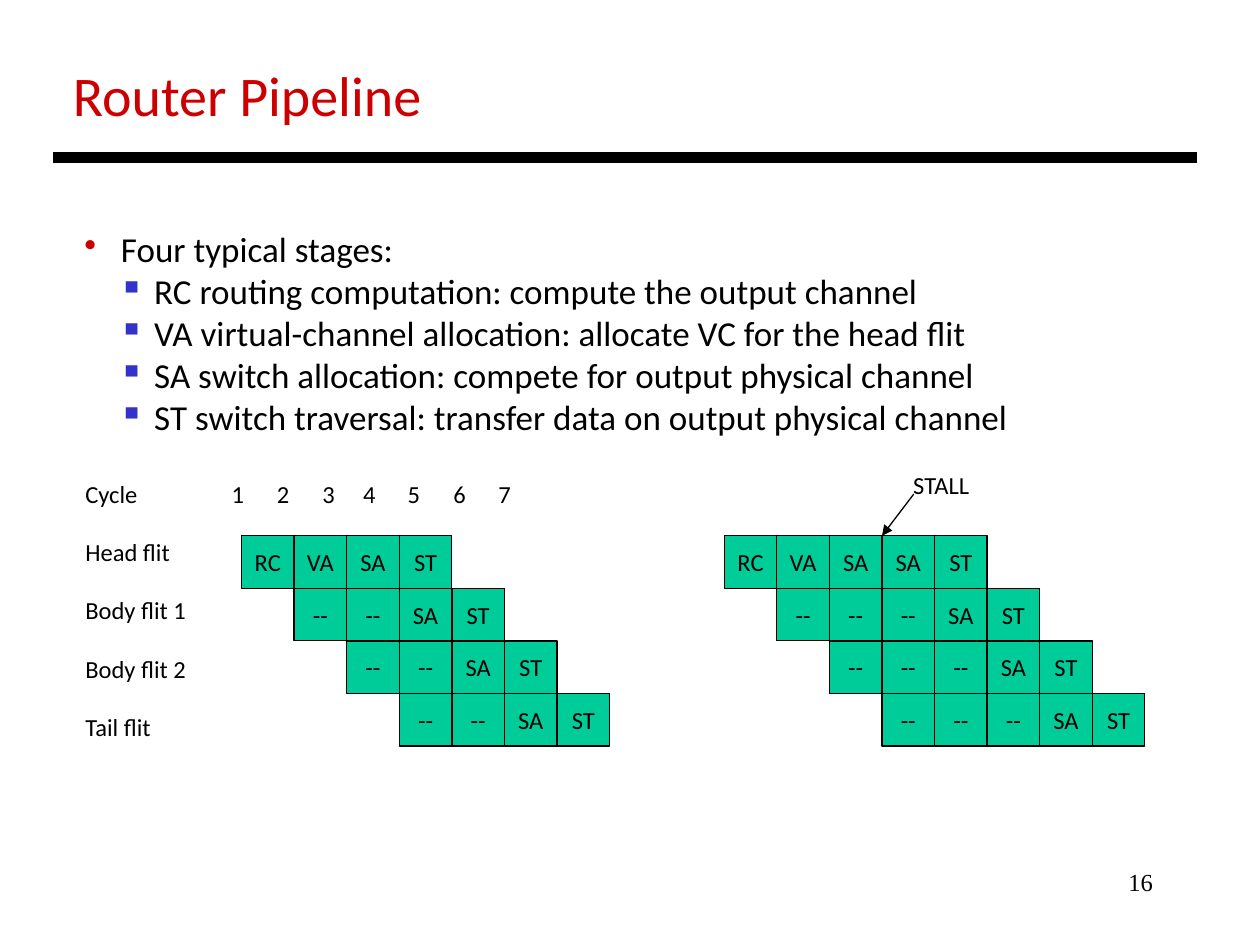
from lxml import etree
from pptx import Presentation
from pptx import util as u
from pptx.dml.color import RGBColor
from pptx.enum import shapes, text
from pptx.oxml.ns import qn

BLACK = RGBColor(0x00, 0x00, 0x00)
RED = RGBColor(0xCC, 0x00, 0x00)
BLUE = RGBColor(0x33, 0x33, 0xCC)
GREEN = RGBColor(0x00, 0xCC, 0x99)
WHITE = RGBColor(0xFF, 0xFF, 0xFF)

CELL = 1.06
CYCLE_TABS = (2.95, 3.86, 4.78, 5.6, 6.5, 7.42, 8.33)
STAGES = (
    "RC routing computation: compute the output channel",
    "VA virtual-channel allocation: allocate VC for the head flit",
    "SA switch allocation: compete for output physical channel",
    "ST switch traversal: transfer data on output physical channel",
)
FLITS = ("Head flit", "Body flit 1", "Body flit 2", "Tail flit")


def style(paragraph, size, color=BLACK, name="Calibri", align=text.PP_ALIGN.LEFT):
    paragraph.alignment = align
    paragraph.font.size = u.Pt(size)
    paragraph.font.name = name
    paragraph.font.color.rgb = color


def add_lines(slide, box, lines, size, **look):
    frame = slide.shapes.add_textbox(*(u.Cm(side) for side in box)).text_frame
    frame.word_wrap = True
    frame.text = "\n".join(lines)
    for paragraph in frame.paragraphs:
        style(paragraph, size, **look)
    return frame.paragraphs


def add_line(slide, start, end, width):
    line = slide.shapes.add_connector(
        shapes.MSO_CONNECTOR.STRAIGHT, *(u.Cm(v) for v in (*start, *end)))
    line.line.color.rgb = BLACK
    line.line.width = u.Pt(width)
    etree.SubElement(line._element.spPr, qn("a:effectLst"))
    return line


def set_bullet(paragraph, char, color, margin, hanging):
    properties = paragraph._p.get_or_add_pPr()
    properties.set("marL", str(u.Cm(margin)))
    properties.set("indent", str(-u.Cm(hanging)))
    tint = etree.Element(qn("a:buClr"))
    etree.SubElement(tint, qn("a:srgbClr"), val=str(color))
    mark = etree.Element(qn("a:buChar"), char=char)
    run_defaults = properties.find(qn("a:defRPr"))
    run_defaults.addprevious(tint)
    run_defaults.addprevious(mark)


def add_heading(slide, left, top):
    add_lines(slide, (left + 0.15, top, 7.62, 1.63), ["Router Pipeline"], 32, color=RED)
    add_line(slide, (left, top + 2.09), (left + 23.06, top + 2.09), 6)


def add_stages(slide, left, top):
    intro, *stages = add_lines(
        slide, (left, top, 19.66, 4.52), ["Four typical stages:", *STAGES], 20)
    set_bullet(intro, "•", RED, 0.74, 0.74)
    for stage in stages:
        stage.level = 1
        set_bullet(stage, "▪", BLUE, 1.41, 0.72)


def add_row_labels(slide, left, top):
    cycles = "\t".join(["Cycle", *map(str, range(1, len(CYCLE_TABS) + 1))])
    header, *flits = add_lines(slide, (left, top, 9.14, 5.64), [cycles, *FLITS], 14)
    tabs = etree.Element(qn("a:tabLst"))
    for position in CYCLE_TABS:
        etree.SubElement(tabs, qn("a:tab"), pos=str(u.Cm(position)), algn="l")
    header._p.pPr.find(qn("a:defRPr")).addprevious(tabs)
    for flit in flits:
        flit.space_before = u.Pt(16.5)


def add_cell(slide, left, top, stage):
    cell = slide.shapes.add_shape(
        shapes.MSO_SHAPE.RECTANGLE, u.Cm(left), u.Cm(top), u.Cm(CELL), u.Cm(CELL))
    cell.shadow.inherit = False
    cell.fill.solid()
    cell.fill.fore_color.rgb = GREEN
    cell.line.color.rgb = BLACK
    cell.line.width = u.Pt(0.75)
    frame = cell.text_frame
    frame.word_wrap = False
    frame.vertical_anchor = text.MSO_ANCHOR.MIDDLE
    frame.text = stage
    style(frame.paragraphs[0], 14, align=text.PP_ALIGN.CENTER)


def add_pipeline(slide, left, top, head, body):
    for row, stages in enumerate([head] + [body] * 3):
        first = 0 if row == 0 else row
        for column, stage in enumerate(stages, first):
            add_cell(slide, left + column * CELL, top + row * CELL, stage)


def add_stall(slide, left, top):
    add_lines(slide, (left + 0.38, top - 1.45, 2, 0.86), ["STALL"], 14)
    arrow = add_line(slide, (left + 0.64, top - 0.84), (left, top), 0.75)
    etree.SubElement(arrow.line._get_or_add_ln(), qn("a:tailEnd"), type="triangle")


def main():
    deck = Presentation()
    deck.slide_width, deck.slide_height = u.Cm(25.4), u.Cm(19.05)
    slide = deck.slides.add_slide(deck.slide_layouts[6])
    slide.background.fill.solid()
    slide.background.fill.fore_color.rgb = WHITE

    add_heading(slide, 1.07, 1.09)
    add_stages(slide, 1.45, 4.47)
    add_row_labels(slide, 1.47, 9.53)
    add_pipeline(slide, 4.87, 10.8, ["RC", "VA", "SA", "ST"], ["--", "--", "SA", "ST"])
    add_pipeline(slide, 14.6, 10.8,
                 ["RC", "VA", "SA", "SA", "ST"], ["--", "--", "--", "SA", "ST"])
    add_stall(slide, 14.6 + 3 * CELL, 10.8)
    add_lines(slide, (18.21, 17.35, 5.28, 1.27), ["16"], 14,
              name="Times New Roman", align=text.PP_ALIGN.RIGHT)
    deck.save("out.pptx")


if __name__ == "__main__":
    main()
